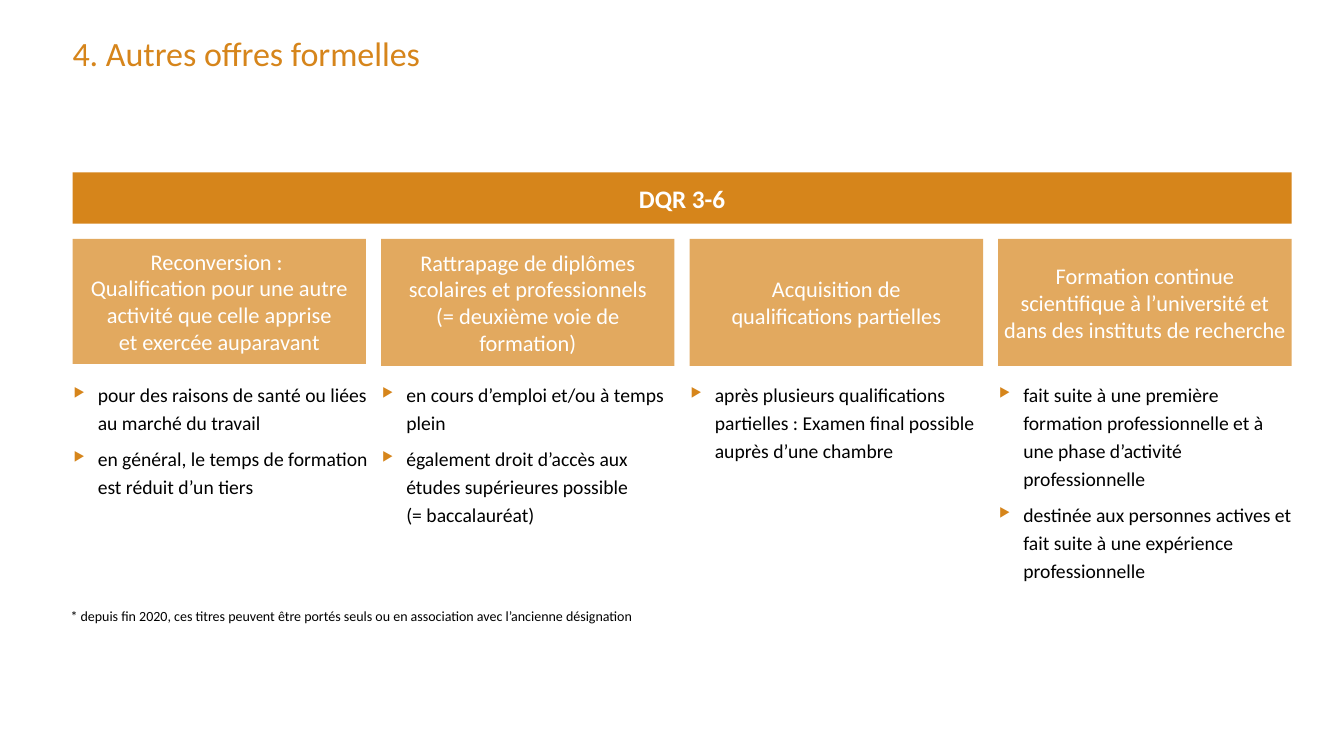
from lxml import etree
from pptx import Presentation
from pptx.dml.color import RGBColor
from pptx.enum import shapes, text
from pptx.oxml import ns
from pptx.util import Inches, Pt

ORANGE, LIGHT_ORANGE, WHITE, BLACK = "D6851B", "E2A95F", "FFFFFF", "000000"
LEFT, FULL_WIDTH = 0.72, 12.09
CARD_WIDTH, CARD_STEP = 2.91, 3.06

# Card height, heading and bullet points of each column
OFFERS = [
    (1.24, "Reconversion : \vQualification pour une autre activité que celle apprise\vet exercée auparavant",
     ["pour des raisons de santé ou liées au marché du travail",
      "en général, le temps de formation est réduit d’un tiers"]),
    (1.26, "Rattrapage de diplômes scolaires et professionnels\v(= deuxième voie de formation)",
     ["en cours d’emploi et/ou à temps plein",
      "également droit d’accès aux études supérieures possible \v(= baccalauréat)"]),
    (1.26, "Acquisition de\vqualifications partielles",
     ["après plusieurs qualifications partielles : Examen final possible\vauprès d’une chambre"]),
    (1.26, "Formation continue scientifique à l’université et dans des instituts de recherche",
     ["fait suite à une première formation professionnelle et à une phase d’activité professionnelle",
      "destinée aux personnes actives et\vfait suite à une expérience professionnelle"]),
]


def rgb(value):
    return RGBColor.from_string(value)


def style_font(paragraph, size, color, bold=False):
    for run in paragraph.runs:
        run.font.name = "Calibri"
        run.font.size = Pt(size)
        run.font.bold = bold
        run.font.color.rgb = rgb(color)


def set_margins(frame, left=0, top=0, right=0, bottom=0):
    frame.margin_left, frame.margin_top = Inches(left), Inches(top)
    frame.margin_right, frame.margin_bottom = Inches(right), Inches(bottom)


def add_text_box(slide, left, top, width, height):
    box = slide.shapes.add_textbox(Inches(left), Inches(top), Inches(width), Inches(height))
    frame = box.text_frame
    frame.word_wrap = True
    set_margins(frame)
    return frame


def add_line(slide, left, top, width, height, content, size, color):
    frame = add_text_box(slide, left, top, width, height)
    frame.text = content
    style_font(frame.paragraphs[0], size, color)


def add_panel(slide, left, top, width, height, fill, content, size, bold=False, bottom=0.08):
    panel = slide.shapes.add_shape(shapes.MSO_SHAPE.RECTANGLE, Inches(left), Inches(top),
                                   Inches(width), Inches(height))
    panel.shadow.inherit = False
    panel.fill.solid()
    panel.fill.fore_color.rgb = rgb(fill)
    panel.line.fill.background()
    frame = panel.text_frame
    frame.word_wrap = True
    frame.vertical_anchor = text.MSO_ANCHOR.MIDDLE
    set_margins(frame, 0.04, 0.08, 0.04, bottom)
    frame.text = content
    paragraph = frame.paragraphs[0]
    paragraph.alignment = text.PP_ALIGN.CENTER
    style_font(paragraph, size, WHITE, bold)
    return paragraph


def add_bullet(paragraph):
    """Give the paragraph a small orange triangle and a hanging indent."""
    properties = paragraph._p.get_or_add_pPr()
    properties.set("marL", str(Inches(0.55)))
    properties.set("indent", str(Inches(-0.24)))
    color = etree.SubElement(properties, ns.qn("a:buClr"))
    etree.SubElement(color, ns.qn("a:srgbClr"), val=ORANGE)
    etree.SubElement(properties, ns.qn("a:buSzPct"), val="65000")
    etree.SubElement(properties, ns.qn("a:buChar"), char="▶")


def add_bullet_list(slide, left, top, width, height, points):
    frame = add_text_box(slide, left, top, width, height)
    for index, point in enumerate(points):
        paragraph = frame.add_paragraph() if index else frame.paragraphs[0]
        paragraph.text = point
        paragraph.level = 1
        add_bullet(paragraph)
        paragraph.line_spacing = Pt(20)
        paragraph.space_before = Pt(6 if index else 0)
        style_font(paragraph, 14, BLACK)


def main():
    presentation = Presentation()
    presentation.slide_width, presentation.slide_height = Inches(13.33), Inches(7.5)
    slide = presentation.slides.add_slide(presentation.slide_layouts[6])

    add_line(slide, LEFT, 0.32, 9.84, 0.49, "4. Autres offres formelles", 24.3, ORANGE)
    banner = add_panel(slide, LEFT, 1.71, FULL_WIDTH, 0.51, ORANGE, "DQR 3-6", 18,
                       bold=True, bottom=0)
    banner.line_spacing = Pt(17)
    for column, (height, heading, points) in enumerate(OFFERS):
        left = LEFT + column * CARD_STEP
        add_panel(slide, left, 2.37, CARD_WIDTH, height, LIGHT_ORANGE, heading, 16)
        add_bullet_list(slide, left - 0.3, 3.75, 3.24, 2.25, points)
    add_line(slide, 0.7, 6.03, 8, 0.17,
             "* depuis fin 2020, ces titres peuvent être portés seuls ou en association "
             "avec l’ancienne désignation", 10, BLACK)

    presentation.save("out.pptx")


if __name__ == "__main__":
    main()
